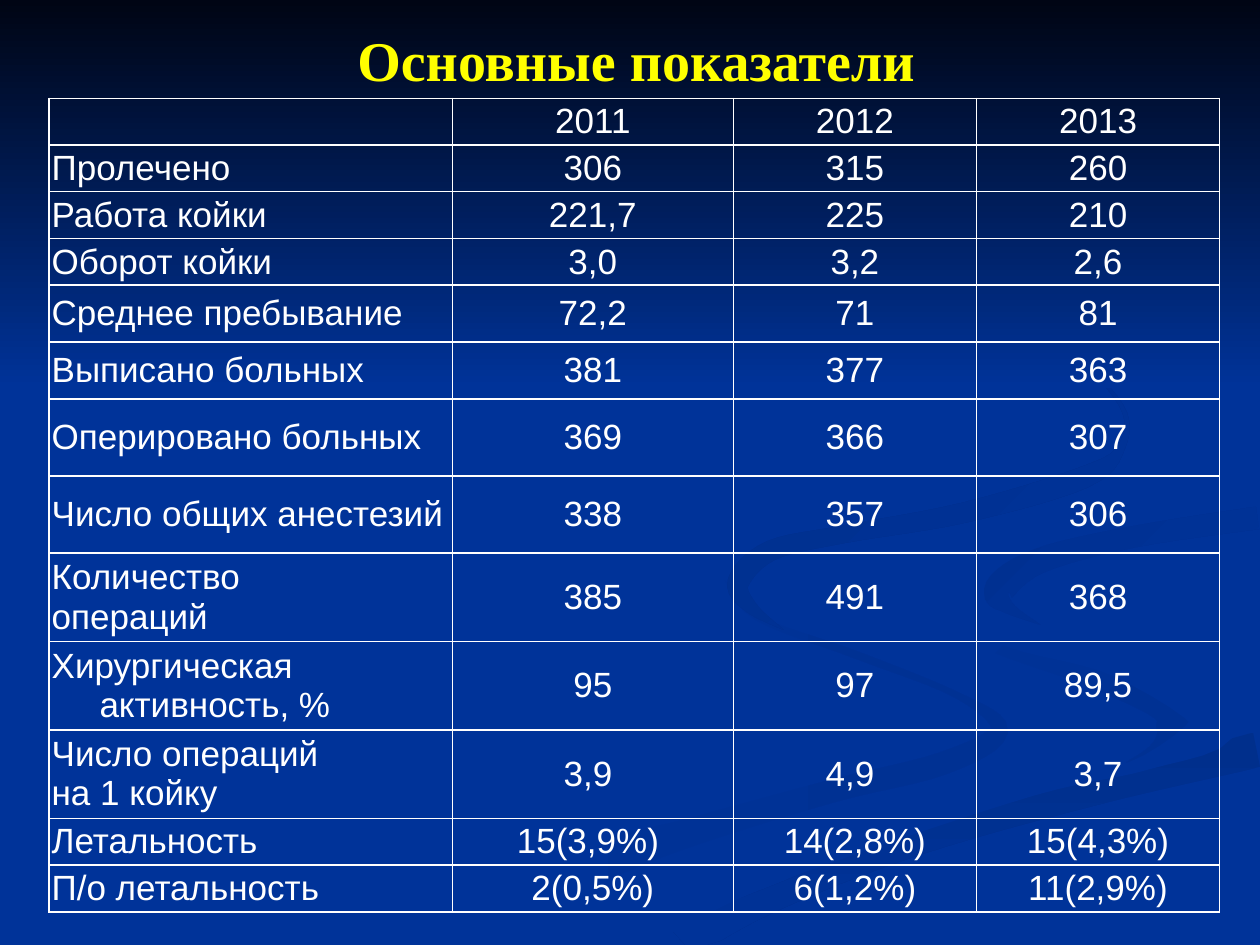
import math

import pptx
import pptx.dml.color
import pptx.enum.shapes
import pptx.enum.text
import pptx.util
from lxml import etree
from pptx.oxml.ns import qn

Inches, Pt = pptx.util.Inches, pptx.util.Pt
RGBColor = pptx.dml.color.RGBColor
Align = pptx.enum.text.PP_ALIGN
MIDDLE = pptx.enum.text.MSO_ANCHOR.MIDDLE

BLUE = RGBColor(0x00, 0x33, 0x99)
NIGHT = RGBColor(0x00, 0x05, 0x14)
WAVE_LIGHT = RGBColor(0x00, 0x31, 0x93)
WAVE_MID = RGBColor(0x00, 0x30, 0x91)
WAVE_DARK = RGBColor(0x00, 0x2F, 0x8C)
YELLOW = RGBColor(0xFF, 0xFF, 0x00)
WHITE = RGBColor(0xFF, 0xFF, 0xFF)

SLIDE_WIDTH, SLIDE_HEIGHT = Inches(10), Inches(7.5)
PERCENT = SLIDE_WIDTH // 100  # unit of the waves, across and down
STEPS = 6  # points drawn between two knots of a wave

# Each wave: first colour, last colour, clockwise gradient angle, and the knots
# (x, y, thickness) that its middle line passes through
WAVES = {
    "left": (BLUE, WAVE_LIGHT, 0, [
        (57.5, 46, 0), (60, 49, 0.4), (68, 52, 0.6), (76, 55.2, 0.5), (79.3, 58, 1.4),
        (74.8, 60.6, 1.8), (66, 62.8, 1.8), (55, 66, 2.2), (47.5, 68.5, 3), (33, 74.9, 2.8)]),
    "inner": (BLUE, WAVE_LIGHT, 45, [
        (72.4, 46.4, 0), (73.5, 48.8, 0.5), (79, 51.3, 1), (86, 53.6, 1.4),
        (92.2, 56, 2.3), (93, 58, 2.5), (91.8, 59.5, 1.2), (89.4, 60.5, 0)]),
    "lower": (WAVE_DARK, BLUE, 90, [
        (53.7, 74.9, 3.2), (61, 71.5, 2), (72.4, 67, 2), (86.5, 62.9, 2.2), (99.8, 59.5, 2.8)]),
    "main": (BLUE, BLUE, 0, [
        (99.9, 39.5, 1.5), (85, 41.9, 1.6), (78, 44, 2.8), (75.3, 46.6, 4), (80.5, 50, 2.9),
        (88.8, 52.6, 2.3), (96.5, 56.8, 4), (91, 60.5, 1.2), (82, 62.8, 0.7),
        (66.5, 67.5, 1.5), (58, 70.8, 1.5), (49.5, 74.9, 2.2)]),
    "right": (WAVE_MID, BLUE, 45, [
        (99.8, 41.1, 1.8), (90, 42.6, 1.7), (82.5, 44.5, 2), (79.3, 46.8, 2.4),
        (80, 48.2, 1), (82.6, 49.6, 0)]),
    "upper": (WAVE_DARK, BLUE, 45, [
        (76.2, 23.3, 0), (84.5, 27.7, 0.2), (89, 32.2, 0.3), (89, 35.5, 0.6), (86, 37.9, 1.7),
        (76.5, 40.7, 1.6), (67, 42.4, 1.4), (61.2, 43.7, 1.6), (58.6, 46.2, 1.7),
        (59.6, 48.2, 1), (62.2, 50, 0)]),
}

TABLE_LEFT, TABLE_TOP, TABLE_HEIGHT = 0.39, 0.78, 6.46
COLUMN_WIDTHS = [3.2, 2.23, 1.93, 1.93]
HANGING = Inches(0.38)
# Kinds of row height, shared out over the table's height
SINGLE, RELAXED, TALL, DOUBLE = 0.37, 0.45, 0.61, 0.7
INDICATORS = [
    (SINGLE, "", "2011", "2012", "2013"),
    (SINGLE, "Пролечено", "306", "315", "260"),
    (SINGLE, "Работа койки", "221,7", "225", "210"),
    (SINGLE, "Оборот койки", "3,0", "3,2", "2,6"),
    (RELAXED, "Среднее пребывание", "72,2", "71", "81"),
    (RELAXED, "Выписано больных", "381", "377", "363"),
    (TALL, "Оперировано больных", "369", "366", "307"),
    (TALL, "Число общих анестезий", "338", "357", "306"),
    (DOUBLE, "Количество\nопераций", "385", "491", "368"),
    (DOUBLE, "Хирургическая активность, %", "95", "97", "89,5"),
    (DOUBLE, "Число операций\nна 1 койку", "3,9 ", "4,9 ", "3,7"),
    (SINGLE, "Летальность", "15(3,9%) ", "14(2,8%)", "15(4,3%)"),
    (SINGLE, "П/о летальность", "2(0,5%)", "6(1,2%)", "11(2,9%)"),
]


def smooth(knots):
    """Pass a Catmull-Rom curve through the knots, thickness included."""
    padded = [knots[0], *knots, knots[-1]]
    curve = []
    for before, start, end, after in zip(padded, padded[1:], padded[2:], padded[3:]):
        for step in range(STEPS):
            t = step / STEPS
            curve.append(tuple(
                b + ((c - a) * t + (2 * a - 5 * b + 4 * c - d) * t ** 2
                     + (3 * b - a - 3 * c + d) * t ** 3) / 2
                for a, b, c, d in zip(before, start, end, after)))
    return curve + [knots[-1]]


def ribbon_outline(knots):
    """Go along one side of the middle line and back along the other."""
    curve = smooth(knots)
    one_side, other_side = [], []
    for index, (x, y, thickness) in enumerate(curve):
        previous, following = curve[max(index - 1, 0)], curve[min(index + 1, len(curve) - 1)]
        direction = math.atan2(following[1] - previous[1], following[0] - previous[0])
        half = max(thickness, 0) / 2
        across, down = -half * math.sin(direction), half * math.cos(direction)
        one_side.append((x + across, y + down))
        other_side.append((x - across, y - down))
    # Keep the ends inside the slide
    return [(min(x * PERCENT, SLIDE_WIDTH), min(y * PERCENT, SLIDE_HEIGHT))
            for x, y in one_side + other_side[::-1]]


def paint(shape, first, last, angle):
    shape.shadow.inherit = False
    shape.line.fill.background()
    if first == last:
        shape.fill.solid()
        shape.fill.fore_color.rgb = first
        return
    shape.fill.gradient()
    shape.fill.gradient_angle = -angle % 360
    for stop, colour in zip(shape.fill.gradient_stops, (first, last)):
        stop.color.rgb = colour


def add_wave(slide, first, last, angle, knots):
    start, *others = ribbon_outline(knots)
    builder = slide.shapes.build_freeform(*start)
    builder.add_line_segments(others, close=True)
    paint(builder.convert_to_shape(), first, last, angle)


def add_backdrop(slide):
    slide.background.fill.solid()
    slide.background.fill.fore_color.rgb = BLUE
    for wave in WAVES.values():
        add_wave(slide, *wave)
    sky = slide.shapes.add_shape(
        pptx.enum.shapes.MSO_SHAPE.RECTANGLE, 0, 0, SLIDE_WIDTH, Inches(3.08))
    paint(sky, NIGHT, BLUE, 90)


def format_paragraph(paragraph, alignment, font_name, size, colour, bold=False):
    paragraph.alignment = alignment
    for run in paragraph.runs:
        run.font.name, run.font.size, run.font.bold = font_name, Pt(size), bold
        run.font.color.rgb = colour


def add_title(slide, text):
    title = slide.shapes.title
    title.left, title.top, title.width, title.height = map(Inches, (0.55, -0.16, 9, 1.25))
    title.text_frame.text = text
    title.text_frame.vertical_anchor = MIDDLE
    format_paragraph(title.text_frame.paragraphs[0], Align.CENTER,
                     "Times New Roman", 32, YELLOW, bold=True)
    # Bring the title in front of the backdrop
    slide.shapes._spTree.append(title._element)


def add_borders(cell):
    properties = cell._tc.get_or_add_tcPr()
    for position, side in enumerate(("lnL", "lnR", "lnT", "lnB")):
        line = etree.Element(qn("a:" + side), w=str(Pt(1)))
        fill = etree.SubElement(line, qn("a:solidFill"))
        etree.SubElement(fill, qn("a:srgbClr"), val=str(WHITE))
        properties.insert(position, line)


def fill_cell(cell, text, alignment):
    cell.fill.background()
    add_borders(cell)
    cell.margin_left = cell.margin_right = cell.margin_top = cell.margin_bottom = Inches(0.02)
    cell.vertical_anchor = MIDDLE
    cell.text_frame.text = text
    for paragraph in cell.text_frame.paragraphs:
        properties = paragraph._p.get_or_add_pPr()
        properties.set("marL", str(HANGING))
        properties.set("indent", str(-HANGING))
        format_paragraph(paragraph, alignment, "Arial", 20, WHITE)


def add_indicators(slide):
    stretch = TABLE_HEIGHT / sum(row[0] for row in INDICATORS)
    table = slide.shapes.add_table(
        len(INDICATORS), len(COLUMN_WIDTHS), Inches(TABLE_LEFT), Inches(TABLE_TOP),
        Inches(sum(COLUMN_WIDTHS)), Inches(TABLE_HEIGHT)).table
    table.first_row = table.horz_banding = False
    for column, width in zip(table.columns, COLUMN_WIDTHS):
        column.width = Inches(width)
    for row, (height, *texts) in zip(table.rows, INDICATORS):
        row.height = Inches(height * stretch)
        for index, text in enumerate(texts):
            fill_cell(row.cells[index], text, Align.CENTER if index else Align.LEFT)


def main():
    presentation = pptx.Presentation()
    presentation.slide_width, presentation.slide_height = SLIDE_WIDTH, SLIDE_HEIGHT
    slide = presentation.slides.add_slide(presentation.slide_layouts[5])
    add_backdrop(slide)
    add_title(slide, "Основные показатели")
    add_indicators(slide)
    presentation.save("out.pptx")


if __name__ == "__main__":
    main()
